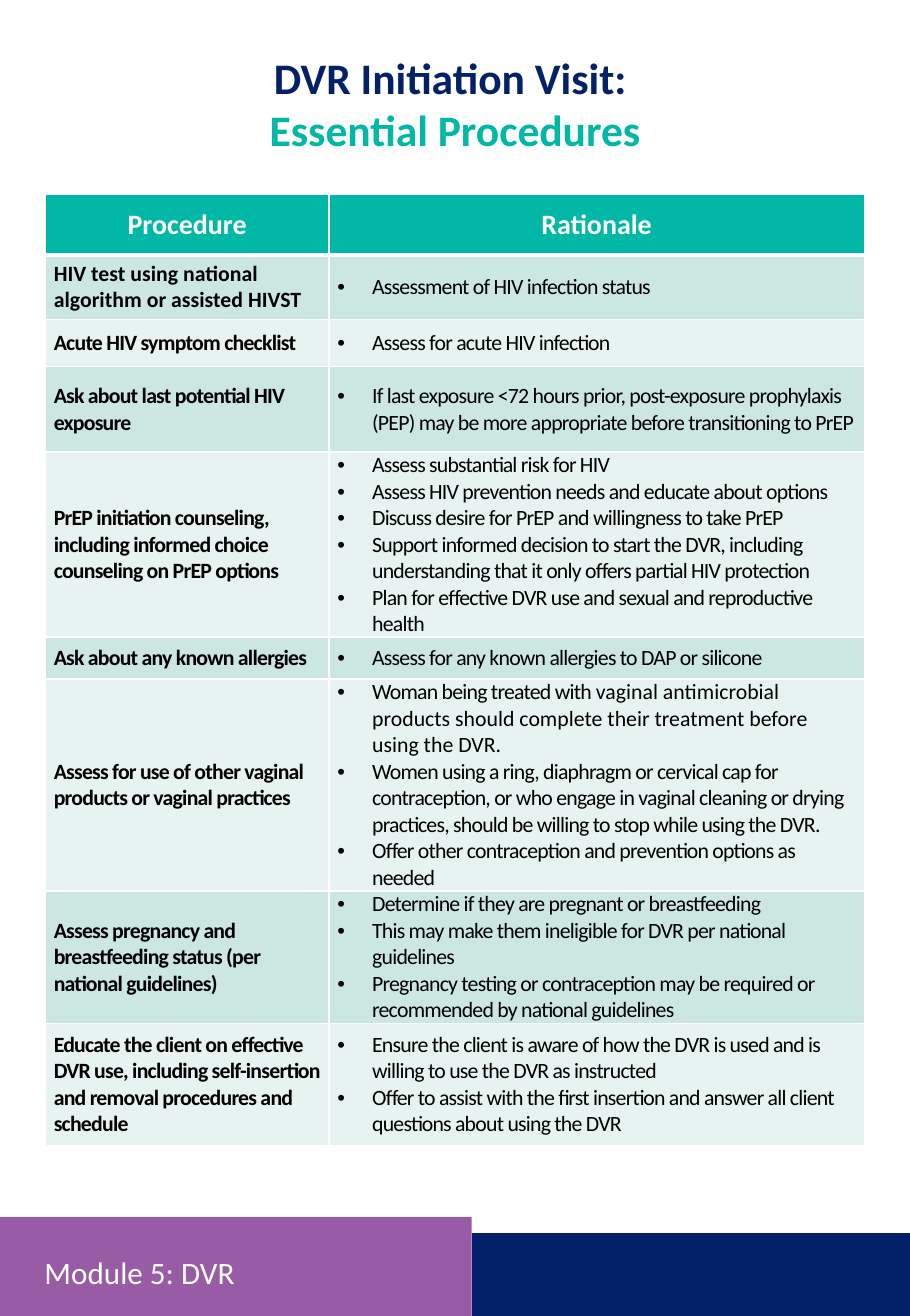
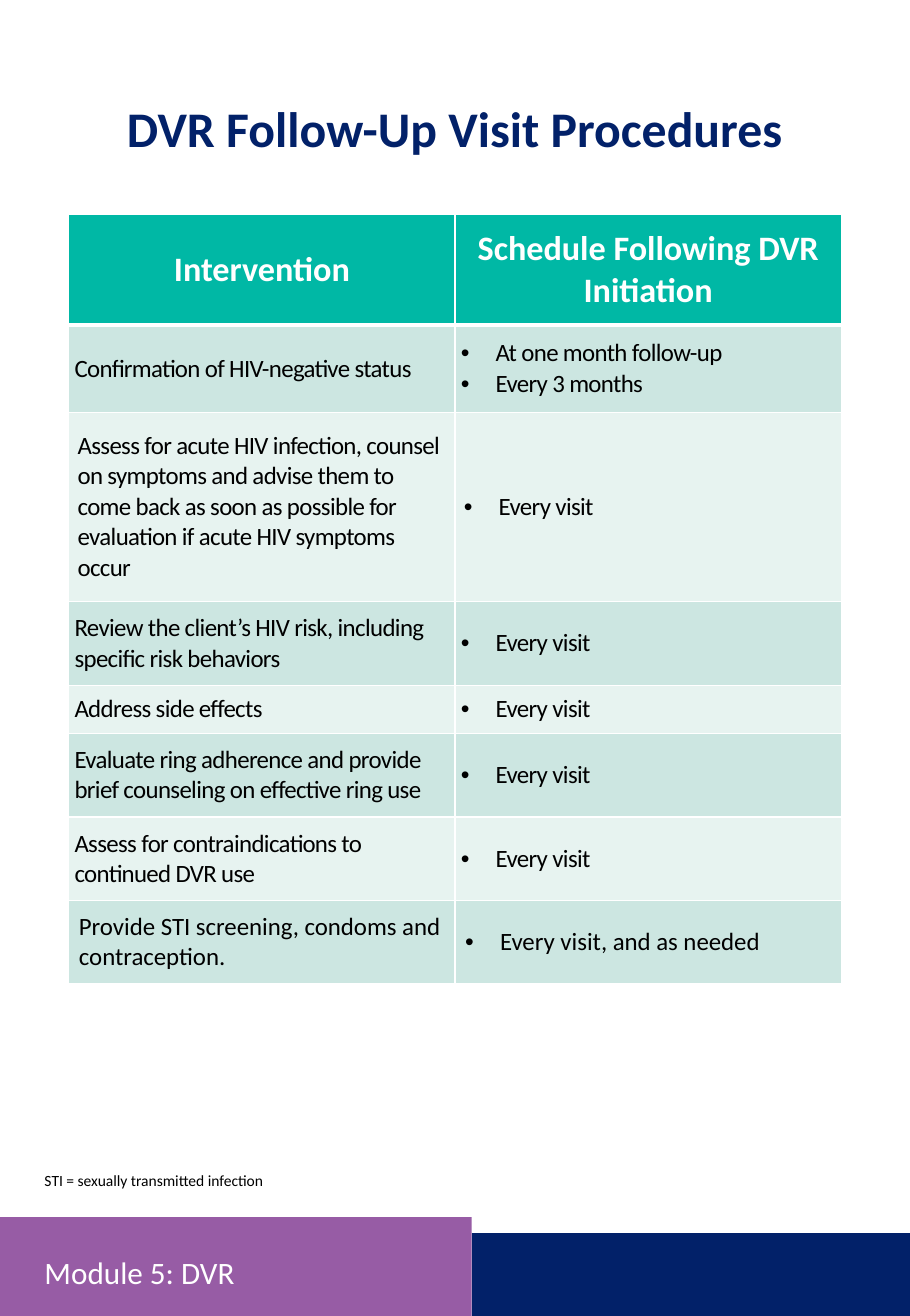
import dataclasses

import lxml.etree
import pptx
import pptx.dml.color
import pptx.enum.shapes
import pptx.enum.text
import pptx.oxml.ns
import pptx.util

Cm = pptx.util.Cm
Pt = pptx.util.Pt
ALIGN = pptx.enum.text.PP_ALIGN
MIDDLE = pptx.enum.text.MSO_ANCHOR.MIDDLE


@dataclasses.dataclass(frozen=True)
class Theme:
    font: str = "Calibri"
    navy: str = "022169"
    purple: str = "975CA5"
    teal: str = "00B8A5"
    white: str = "FFFFFF"
    black: str = "000000"
    bands: tuple = ("CCE6E1", "E7F3F0")
    footer_size: int = 20
    note_size: int = 10
    thin: float = 1
    thick: float = 3
    hanging: float = 0.79


@dataclasses.dataclass(frozen=True)
class Box:
    left: float
    top: float
    width: float
    height: float

    def lengths(self):
        return [Cm(value) for value in dataclasses.astuple(self)]


@dataclasses.dataclass(frozen=True)
class Row:
    height: float
    label: str
    points: list
    inset: float = None
    label_tracking: float = None
    points_tracking: float = None


@dataclasses.dataclass(frozen=True)
class TableStyle:
    columns: tuple
    header_height: float
    header_size: int
    body_size: int
    label_bold: bool
    tracking: float
    inset: float
    points_padding: float


THEME = Theme()
CM_PER_INCH = 2.54
PAGE = Box(0, 0, CM_PER_INCH * 65 / 8, CM_PER_INCH * 47 / 4)
LABEL_PADDING = 0.13


def rgb(value):
    return pptx.dml.color.RGBColor.from_string(value)


def style_span(span, size, color, bold=False, tracking=0):
    span.font.name = THEME.font
    span.font.size = Pt(size)
    span.font.bold = bold
    span.font.color.rgb = rgb(color)
    if tracking:
        span.font._element.set("spc", str(round(tracking * 100)))


def add_text(page, box, lines, size, bold=False, align=ALIGN.LEFT,
             spacing=1.0, anchor=pptx.enum.text.MSO_ANCHOR.TOP):
    frame = page.shapes.add_textbox(*box.lengths()).text_frame
    frame.word_wrap = True
    frame.vertical_anchor = anchor
    frame.text = "\n".join(text for text, color in lines)
    for para, (text, color) in zip(frame.paragraphs, lines):
        para.alignment = align
        para.line_spacing = spacing
        style_span(para.runs[0], size, color, bold)


def add_footer(page, box):
    split = 10.7
    step = 0.36
    bands = [
        (Box(split, box.top + step, box.width - split, box.height - step), THEME.navy),
        (Box(box.left, box.top, split, box.height), THEME.purple),
    ]
    for band, color in bands:
        shape = page.shapes.add_shape(
            pptx.enum.shapes.MSO_SHAPE.RECTANGLE, *band.lengths())
        shape.shadow.inherit = False
        shape.fill.solid()
        shape.fill.fore_color.rgb = rgb(color)
        shape.line.fill.background()
    add_text(page, Box(box.left + 0.76, box.top + 0.66, 9.12, 1.27),
             [("Module 5: DVR", THEME.white)], THEME.footer_size,
             spacing=0.9, anchor=MIDDLE)


def add_borders(cell, top, bottom):
    properties = cell._tc.get_or_add_tcPr()
    edges = [("lnL", THEME.thin), ("lnR", THEME.thin), ("lnT", top), ("lnB", bottom)]
    for index, (tag, width) in enumerate(edges):
        line = lxml.etree.Element(pptx.oxml.ns.qn("a:" + tag), w=str(Pt(width)))
        fill = lxml.etree.SubElement(line, pptx.oxml.ns.qn("a:solidFill"))
        lxml.etree.SubElement(fill, pptx.oxml.ns.qn("a:srgbClr"), val=THEME.white)
        properties.insert(index, line)


def format_cell(cell, color, inset, padding, top=THEME.thin, bottom=THEME.thin):
    cell.vertical_anchor = MIDDLE
    cell.margin_left = cell.margin_right = Cm(inset)
    cell.margin_top = cell.margin_bottom = Cm(padding)
    cell.fill.solid()
    cell.fill.fore_color.rgb = rgb(color)
    add_borders(cell, top, bottom)


def add_bullet(para):
    properties = para._p.get_or_add_pPr()
    properties.set("marL", str(Cm(THEME.hanging)))
    properties.set("indent", str(-Cm(THEME.hanging)))
    lxml.etree.SubElement(properties, pptx.oxml.ns.qn("a:buFont"), typeface="Arial")
    lxml.etree.SubElement(properties, pptx.oxml.ns.qn("a:buChar"), char="•")


def fill_points(frame, points, size, tracking):
    for index, point in enumerate(points):
        para = frame.add_paragraph() if index else frame.paragraphs[0]
        text, loose = point if isinstance(point, tuple) else (point, "")
        para.text = text
        add_bullet(para)
        style_span(para.runs[0], size, THEME.black, tracking=tracking)
        if loose:
            span = para.add_run()
            span.text = loose
            style_span(span, size, THEME.black)


def add_procedure_table(page, left, top, headings, rows, style):
    heights = [style.header_height] + [row.height for row in rows]
    box = Box(left, top, sum(style.columns), sum(heights))
    table = page.shapes.add_table(
        len(heights), len(style.columns), *box.lengths()).table
    table.horz_banding = False
    for column, width in zip(table.columns, style.columns):
        column.width = Cm(width)
    for table_row, height in zip(table.rows, heights):
        table_row.height = Cm(height)

    for cell, heading in zip(table.rows[0].cells, headings):
        cell.text_frame.text = heading
        para = cell.text_frame.paragraphs[0]
        para.alignment = ALIGN.CENTER
        style_span(para.runs[0], style.header_size, THEME.white, True)
        format_cell(cell, THEME.teal, 0.18, 0.1, bottom=THEME.thick)

    for index, row in enumerate(rows):
        label, points = table.rows[index + 1].cells
        tracking = [style.tracking if value is None else value
                    for value in (row.label_tracking, row.points_tracking)]
        label.text_frame.text = row.label
        style_span(label.text_frame.paragraphs[0].runs[0], style.body_size,
                   THEME.black, style.label_bold, tracking[0])
        fill_points(points.text_frame, row.points, style.body_size, tracking[1])
        for cell, padding in ((label, LABEL_PADDING), (points, style.points_padding)):
            format_cell(cell, THEME.bands[index % 2], row.inset or style.inset,
                        padding, top=THEME.thin if index else THEME.thick)


def add_page(deck):
    page = deck.slides.add_slide(deck.slide_layouts[6])
    footer_height = 2.24
    add_footer(page, Box(0, PAGE.height - footer_height, PAGE.width, footer_height))
    return page


def add_initiation_page(deck):
    page = add_page(deck)
    add_text(page, Box(1.56, 1.02, 17.52, 3.28),
             [("DVR Initiation Visit: ", THEME.navy),
              ("Essential Procedures", THEME.teal)],
             28, bold=True, align=ALIGN.CENTER)
    rows = [
        Row(1.47, "HIV test using national algorithm or assisted HIVST",
            ["Assessment of HIV infection status"], label_tracking=0),
        Row(1.07, "Acute HIV symptom checklist", ["Assess for acute HIV infection"]),
        Row(1.93, "Ask about last potential HIV exposure",
            ["If last exposure <72 hours prior, post-exposure prophylaxis (PEP) may be "
             "more appropriate before transitioning to PrEP"]),
        Row(4.2, "PrEP initiation counseling, including informed choice counseling "
                 "on PrEP options",
            ["Assess substantial risk for HIV",
             "Assess HIV prevention needs and educate about options",
             "Discuss desire for PrEP and willingness to take PrEP",
             "Support informed decision to start the DVR, including understanding "
             "that it only offers partial HIV protection",
             "Plan for effective DVR use and sexual and reproductive health"]),
        Row(0.95, "Ask about any known allergies",
            ["Assess for any known allergies to DAP or silicone"]),
        Row(4.81, "Assess for use of other vaginal products or vaginal practices",
            [("Woman being treated with ",
              "vaginal antimicrobial products should complete their treatment "
              "before using the DVR."),
             "Women using a ring, diaphragm or cervical cap for contraception, or who "
             "engage in vaginal cleaning or drying practices, should be willing to "
             "stop while using the DVR.",
             "Offer other contraception and prevention options as needed"]),
        Row(3, "Assess pregnancy and breastfeeding status (per national guidelines)",
            ["Determine if they are pregnant or breastfeeding",
             "This may make them ineligible for DVR per national guidelines",
             "Pregnancy testing or contraception may be required or recommended by "
             "national guidelines"]),
        Row(2.77, "Educate the client on effective DVR use, including self-insertion "
                  "and removal procedures and schedule",
            ["Ensure the client is aware of how the DVR is used and is willing to use "
             "the DVR as instructed",
             "Offer to assist with the first insertion and answer all client "
             "questions about using the DVR"]),
    ]
    style = TableStyle(columns=(6.43, 12.14), header_height=1.38, header_size=18,
                       body_size=14, label_bold=True, tracking=-0.5,
                       inset=0.19, points_padding=0)
    add_procedure_table(page, 1.03, 4.4, ("Procedure", "Rationale"), rows, style)


def add_follow_up_page(deck):
    page = add_page(deck)
    add_text(page, Box(1.56, 2.24, 17.52, 2.06),
             [("DVR Follow-Up Visit Procedures", THEME.navy)],
             32, bold=True, align=ALIGN.CENTER, spacing=0.9)
    every_visit = ["Every visit"]
    rows = [
        Row(1.98, "Confirmation of HIV-negative status",
            ["At one month follow-up", "Every 3 months"]),
        Row(4.29, "Assess for acute HIV infection, counsel on symptoms and advise them "
                  "to come back as soon as possible for evaluation if acute HIV "
                  "symptoms occur", every_visit, inset=0.2),
        Row(1.9, "Review the client’s HIV risk, including specific risk behaviors",
            every_visit),
        Row(1.09, "Address side effects", every_visit),
        Row(1.9, "Evaluate ring adherence and provide brief counseling on effective "
                 "ring use", every_visit),
        Row(1.9, "Assess for contraindications to continued DVR use", every_visit),
        Row(1.88, "Provide STI screening, condoms and contraception.",
            ["Every visit, and as needed"], inset=0.23,
            label_tracking=0, points_tracking=0),
    ]
    style = TableStyle(columns=(8.76, 8.76), header_height=2.51, header_size=22,
                       body_size=16, label_bold=False, tracking=-0.4,
                       inset=0.13, points_padding=LABEL_PADDING)
    add_procedure_table(page, 1.56, 4.86,
                        ("Intervention", "Schedule Following DVR Initiation"),
                        rows, style)
    add_text(page, Box(0.76, 26.42, 5.6, 0.68),
             [("STI = sexually transmitted infection", THEME.black)], THEME.note_size)


def main():
    deck = pptx.Presentation()
    deck.slide_width = Cm(PAGE.width)
    deck.slide_height = Cm(PAGE.height)
    add_initiation_page(deck)
    add_follow_up_page(deck)
    deck.save("out.pptx")


if __name__ == "__main__":
    main()
